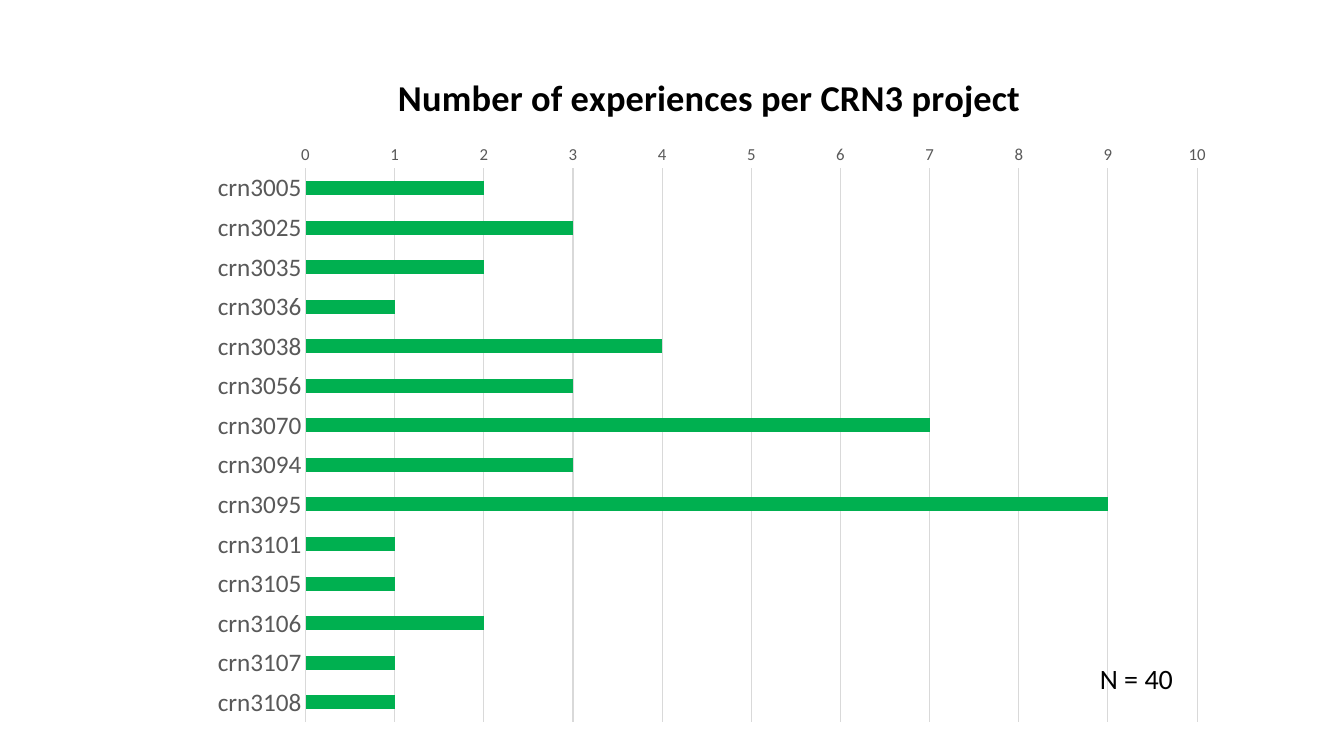
"""Build a slide with a bar chart of experiences per CRN3 project."""
from dataclasses import dataclass

import lxml.etree
import pptx
import pptx.chart.data
import pptx.dml.color
import pptx.enum.chart
import pptx.enum.text
import pptx.oxml.ns
import pptx.util

Inches = pptx.util.Inches


@dataclass(frozen=True)
class Theme:
    font: str = "Calibri"
    black: str = "000000"
    label: str = "595959"
    grid: str = "D9D9D9"
    bar: str = "00B050"
    title_size: int = 26
    note_size: int = 20
    category_size: int = 18
    value_size: int = 12
    line_width: float = 0.75


THEME = Theme()
EXPERIENCES = {
    "crn3005": 2, "crn3025": 3, "crn3035": 2, "crn3036": 1, "crn3038": 4,
    "crn3056": 3, "crn3070": 7, "crn3094": 3, "crn3095": 9, "crn3101": 1,
    "crn3105": 1, "crn3106": 2, "crn3107": 1, "crn3108": 1,
}


def style_font(font, size, color, bold=False):
    font.name = THEME.font
    font.size = pptx.util.Pt(size)
    font.bold = bold
    font.color.rgb = pptx.dml.color.RGBColor.from_string(color)


def style_line(line):
    line.color.rgb = pptx.dml.color.RGBColor.from_string(THEME.grid)
    line.width = pptx.util.Pt(THEME.line_width)


def set_layout(parent, index, **fractions):
    for layout in parent.findall(pptx.oxml.ns.qn("c:layout")):
        parent.remove(layout)
    layout = parent.makeelement(pptx.oxml.ns.qn("c:layout"))
    parent.insert(index, layout)
    manual = lxml.etree.SubElement(layout, pptx.oxml.ns.qn("c:manualLayout"))
    settings = {"xMode": "edge", "yMode": "edge", **fractions}
    if "w" in fractions:
        settings = {"layoutTarget": "inner", **settings}
    for name, value in settings.items():
        lxml.etree.SubElement(manual, pptx.oxml.ns.qn(f"c:{name}"), val=str(value))


def style_axis(axis, size):
    axis.major_tick_mark = pptx.enum.chart.XL_TICK_MARK.NONE
    axis.minor_tick_mark = pptx.enum.chart.XL_TICK_MARK.NONE
    style_font(axis.tick_labels.font, size, THEME.label)


def add_title(chart, text):
    title = chart.chart_title
    title.text_frame.text = text
    run = title.text_frame.paragraphs[0].runs[0]
    style_font(run.font, THEME.title_size, THEME.black, bold=True)
    title.include_in_layout = False
    set_layout(title.element, 1, x=0.2, y=0.04)


def add_experience_chart(slide):
    data = pptx.chart.data.CategoryChartData()
    data.categories = list(EXPERIENCES)
    data.add_series("Series 1", list(EXPERIENCES.values()))
    chart = slide.shapes.add_chart(
        pptx.enum.chart.XL_CHART_TYPE.BAR_CLUSTERED,
        Inches(1.83), Inches(0.37), Inches(10.26), Inches(6.99), data,
    ).chart
    chart.has_legend = False
    style_font(chart.font, 10, THEME.black)
    add_title(chart, "Number of experiences per CRN3 project")

    plot = chart.plots[0]
    plot.gap_width = 182
    plot.vary_by_categories = False
    fill = plot.series[0].format.fill
    fill.solid()
    fill.fore_color.rgb = pptx.dml.color.RGBColor.from_string(THEME.bar)
    plot_area = chart.element.xpath("c:chart/c:plotArea")[0]
    set_layout(plot_area, 0, x=0.117, y=0.186, w=0.862, h=0.786)

    style_axis(chart.category_axis, THEME.category_size)
    chart.category_axis.reverse_order = True
    style_line(chart.category_axis.format.line)

    value_axis = chart.value_axis
    style_axis(value_axis, THEME.value_size)
    value_axis.minimum_scale, value_axis.maximum_scale = 0, 10
    value_axis.major_unit = 1
    value_axis.format.line.fill.background()
    style_line(value_axis.major_gridlines.format.line)


def add_note(slide, text):
    box = slide.shapes.add_textbox(Inches(10.81), Inches(6.51), Inches(1.02), Inches(0.44))
    frame = box.text_frame
    frame.text = text
    frame.word_wrap = False
    frame.auto_size = pptx.enum.text.MSO_AUTO_SIZE.SHAPE_TO_FIT_TEXT
    style_font(frame.paragraphs[0].runs[0].font, THEME.note_size, THEME.black)


def main():
    presentation = pptx.Presentation()
    presentation.slide_width = Inches(13.33)
    presentation.slide_height = Inches(7.5)
    slide = presentation.slides.add_slide(presentation.slide_layouts[6])
    add_experience_chart(slide)
    add_note(slide, "N = 40")
    presentation.save("out.pptx")


if __name__ == "__main__":
    main()
